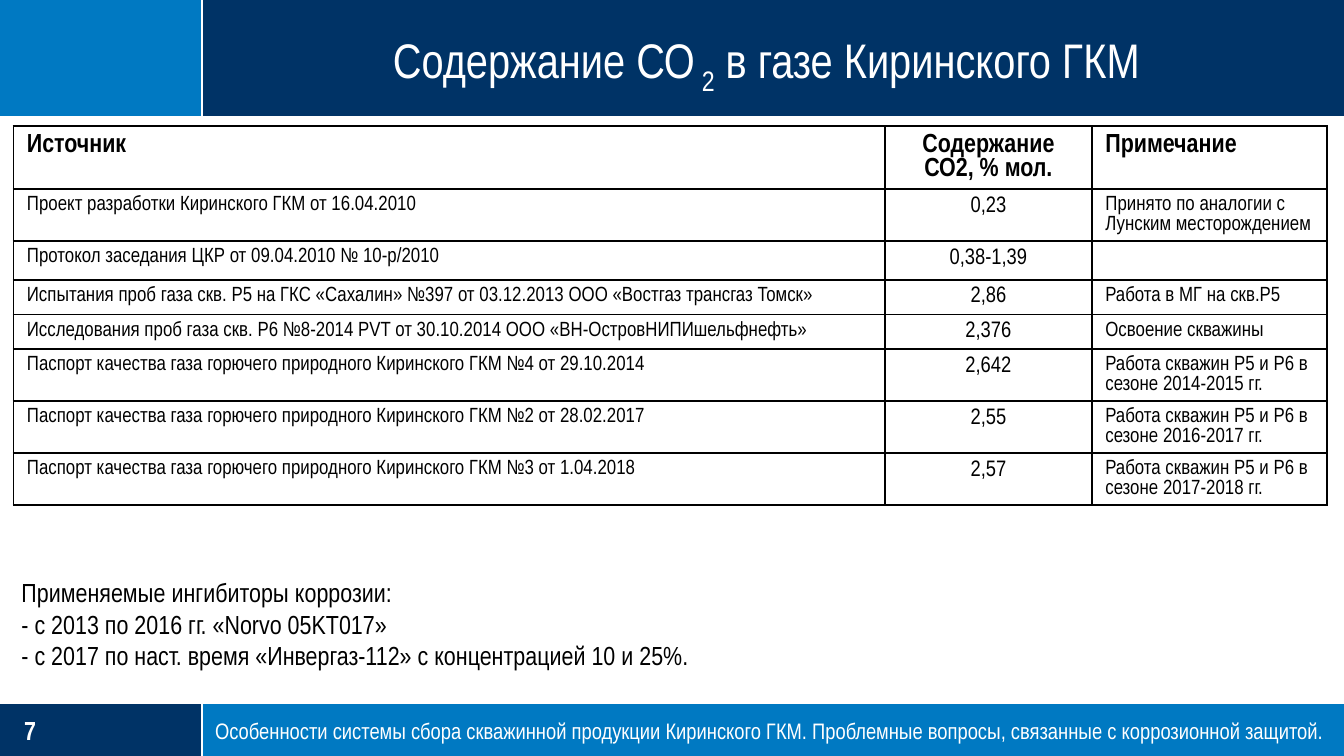
"""Build the slide on CO2 content in the gas of the Kirinskoye field."""
from typing import NamedTuple

from lxml.etree import SubElement
from pptx import Presentation
from pptx.dml.color import RGBColor
from pptx.enum.shapes import MSO_CONNECTOR, MSO_SHAPE
from pptx.enum.text import MSO_ANCHOR, MSO_AUTO_SIZE, PP_ALIGN
from pptx.oxml.ns import qn
from pptx.util import Inches, Pt

WIDE = Inches(10)
HIGH = WIDE * 9 // 16
BLUE = RGBColor(0x00, 0x79, 0xC2)
NAVY = RGBColor(0x00, 0x33, 0x66)
WHITE = RGBColor(0xFF, 0xFF, 0xFF)
BLACK = RGBColor(0x00, 0x00, 0x00)
FONT = "Arial Narrow"
HEAD, FOOT, SIDE = 15.55, 92.95, 15.05


class Box(NamedTuple):
    """A place in percent of the slide's width and height."""
    left: float
    top: float
    width: float
    height: float

    def frame(self) -> tuple[int, int, int, int]:
        """Return left, top, width and height in EMU."""
        return (across(self.left), down(self.top),
                across(self.width), down(self.height))


class Band(NamedTuple):
    """A filled strip of the slide's frame."""
    box: Box
    color: RGBColor


class Rule(NamedTuple):
    """A straight line between two points in percent."""
    left: float
    top: float
    right: float
    end: float


class Row(NamedTuple):
    """A table row with its height in percent of the slide."""
    source: str
    value: str
    note: str
    height: float


ONE, TWO = 4.58, 6.88
BANDS = [
    Band(Box(0, FOOT, 100, 100 - FOOT), BLUE),
    Band(Box(0, 0, 100, HEAD), NAVY),
    Band(Box(0, 0, SIDE, HEAD), BLUE),
    Band(Box(0, FOOT, SIDE, 100 - FOOT), NAVY),
]
RULES = [
    Rule(0, FOOT, 100, FOOT),
    Rule(SIDE, FOOT, SIDE, 100),
    Rule(SIDE, 0, SIDE, HEAD),
    Rule(0, HEAD, 100, HEAD),
]
COLS = [64.85, 15.4, 17.5]
PASS = "Паспорт качества газа горючего природного Киринского ГКМ "
WORK = "Работа скважин Р5 и Р6 в сезоне "
ROWS = [
    Row("Источник", "Содержание СО2, % мол.", "Примечание", 8.27),
    Row("Проект разработки Киринского ГКМ от 16.04.2010", "0,23",
        "Принято по аналогии с Лунским месторождением", TWO),
    Row("Протокол заседания ЦКР от 09.04.2010 № 10-р/2010", "0,38-1,39", "", ONE),
    Row("Испытания проб газа скв. Р5 на ГКС «Сахалин» №397 от 03.12.2013 "
        "ООО «Востгаз трансгаз Томск»", "2,86", "Работа в МГ на скв.Р5", ONE),
    Row("Исследования проб газа скв. Р6 №8-2014 PVT от 30.10.2014 "
        "ООО «ВН-ОстровНИПИшельфнефть»", "2,376", "Освоение скважины", ONE),
    Row(PASS + "№4 от 29.10.2014", "2,642", WORK + "2014-2015 гг.", TWO),
    Row(PASS + "№2 от 28.02.2017", "2,55", WORK + "2016-2017 гг.", TWO),
    Row(PASS + "№3 от 1.04.2018", "2,57", WORK + "2017-2018 гг.", TWO),
]
USED = """Применяемые ингибиторы коррозии:
- с 2013 по 2016 гг. «Norvo 05KT017»
- с 2017 по наст. время «Инвергаз-112» с концентрацией 10 и 25%."""
TOPIC = ("Особенности системы сбора скважинной продукции Киринского ГКМ. "
         "Проблемные вопросы, связанные с коррозионной защитой.")


def across(share: float) -> int:
    """Turn a percent of the width into EMU."""
    return round(WIDE * share / 100)


def down(share: float) -> int:
    """Turn a percent of the height into EMU."""
    return round(HIGH * share / 100)


def style(frame, size: float, color: RGBColor, bold: bool = False) -> None:
    """Format every run of a text frame."""
    for para in frame.paragraphs:
        for run in para.runs:
            run.font.name, run.font.size = FONT, Pt(size)
            run.font.bold, run.font.color.rgb = bold, color


def tighten(frame) -> None:
    """Take away the margins of a text frame."""
    frame.margin_left = frame.margin_right = 0
    frame.margin_top = frame.margin_bottom = 0


def place(shape, box: Box) -> None:
    """Move a placeholder to its box, in front of the shapes so far."""
    shape.left, shape.top, shape.width, shape.height = box.frame()
    shape.text_frame.auto_size = MSO_AUTO_SIZE.NONE
    tree = shape._element.getparent()
    tree.append(shape._element)


def draw_band(slide, band: Band) -> None:
    """Draw one filled strip."""
    shape = slide.shapes.add_shape(MSO_SHAPE.RECTANGLE, *band.box.frame())
    shape.shadow.inherit = False
    shape.fill.solid()
    shape.fill.fore_color.rgb = band.color
    shape.line.fill.background()


def draw_rule(slide, rule: Rule) -> None:
    """Draw one white dividing line."""
    line = slide.shapes.add_connector(
        MSO_CONNECTOR.STRAIGHT, across(rule.left), down(rule.top),
        across(rule.right), down(rule.end))
    line.line.color.rgb, line.line.width = WHITE, Pt(1.25)
    SubElement(line._element.spPr, qn("a:effectLst"))


def draw_text(slide, box: Box, text: str, color: RGBColor, bold: bool = False):
    """Draw a text box and return its frame."""
    frame = slide.shapes.add_textbox(*box.frame()).text_frame
    frame.word_wrap, frame.text = True, text
    style(frame, 14, color, bold)
    return frame


def fill_title(shape) -> None:
    """Write the title with its lowered figure."""
    place(shape, Box(17, 1.4, 80.1, 11.4))
    frame = shape.text_frame
    tighten(frame)
    frame.vertical_anchor = MSO_ANCHOR.BOTTOM
    para = frame.paragraphs[0]
    para.alignment = PP_ALIGN.CENTER
    for text in ("Содержание СО", " 2", " в газе Киринского ГКМ"):
        para.add_run().text = text
    style(frame, 26, WHITE)
    para.runs[1].font._element.set("baseline", "-25000")


def fill_topic(shape) -> None:
    """Write the topic of the talk in the foot band."""
    place(shape, Box(15, 93.4, 85, 6.6))
    frame = shape.text_frame
    frame.text, frame.vertical_anchor = TOPIC, MSO_ANCHOR.MIDDLE
    para = frame.paragraphs[0]
    para.space_before = Pt(0)
    props = para._p.get_or_add_pPr()
    props.set("marL", "0")
    props.set("indent", "0")
    SubElement(props, qn("a:buNone"))
    style(frame, 12, WHITE)


def edge(cell) -> None:
    """Give a cell clear ground and black borders."""
    props = cell._tc.get_or_add_tcPr()
    for side in ("lnL", "lnR", "lnT", "lnB"):
        line = SubElement(props, qn(f"a:{side}"), w=str(Pt(1)))
        fill = SubElement(line, qn("a:solidFill"))
        SubElement(fill, qn("a:srgbClr"), val=str(BLACK))
    cell.fill.background()


def fill_cell(cell, text: str, size: int, bold: bool, mid: bool) -> None:
    """Write and format one cell."""
    edge(cell)
    frame = cell.text_frame
    frame.text = text
    para = frame.paragraphs[0]
    para.alignment = PP_ALIGN.CENTER if mid else PP_ALIGN.LEFT
    style(frame, size, BLACK, bold)
    if not text:
        para.line_spacing = Pt(size)
        SubElement(para._p, qn("a:endParaRPr"), sz=str(size * 100))


def draw_table(slide) -> None:
    """Draw the table of measured contents."""
    box = Box(1, 16.7, sum(COLS), sum(row.height for row in ROWS))
    table = slide.shapes.add_table(len(ROWS), len(COLS), *box.frame()).table
    table.first_row = table.horz_banding = False
    for col, share in zip(table.columns, COLS):
        col.width = across(share)
    for i, row in enumerate(ROWS):
        table.rows[i].height = down(row.height)
        for j, text in enumerate(row[:3]):
            size = 14 if i == 0 else 12 if j == 1 else 11
            fill_cell(table.cell(i, j), text, size, i == 0, j == 1)


def main() -> None:
    """Build and save the slide."""
    deck = Presentation()
    deck.slide_width, deck.slide_height = WIDE, HIGH
    slide = deck.slides.add_slide(deck.slide_layouts[1])
    for band in BANDS:
        draw_band(slide, band)
    page = draw_text(slide, Box(1.8, 94.4, 10.1, 4.3), "7", WHITE, True)
    tighten(page)
    page.vertical_anchor = MSO_ANCHOR.MIDDLE
    for rule in RULES:
        draw_rule(slide, rule)
    fill_title(slide.shapes.title)
    fill_topic(slide.placeholders[1])
    draw_table(slide)
    draw_text(slide, Box(0.62, 75.4, 68.3, 14.4), USED, BLACK)
    deck.save("out.pptx")


if __name__ == "__main__":
    main()
